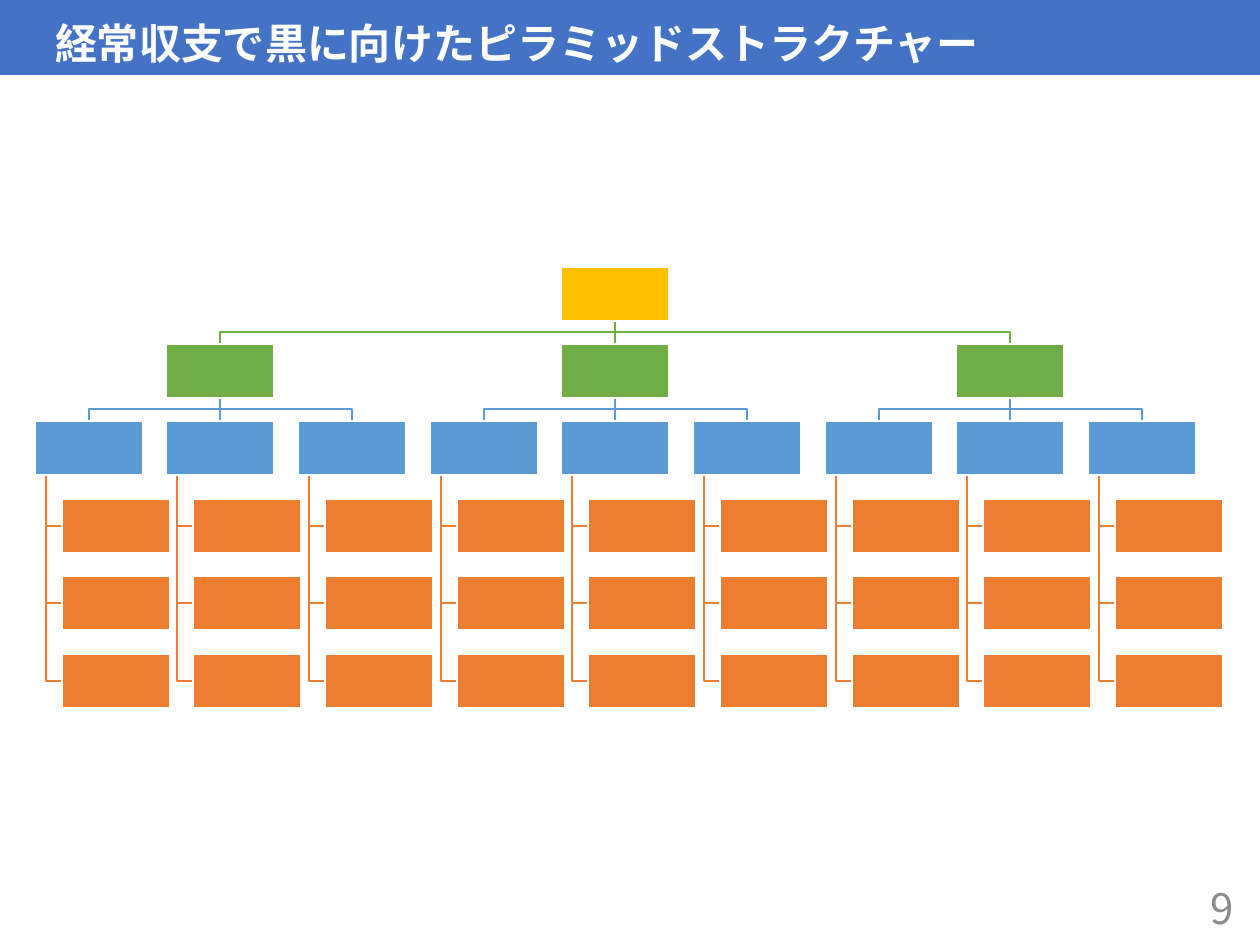
from lxml import etree
from pptx import Presentation
from pptx import util as u
from pptx.dml.color import RGBColor
from pptx.enum import shapes, text
from pptx.oxml.ns import qn

SCALE = 914400 / 126
FONT = "Noto Sans CJK JP"
HEX = {
    "band": "4472C4", "white": "FFFFFF", "page": "8C8C8C",
    "top": "FFC000", "branch": "70AD47", "sub": "5B9BD5", "leaf": "ED7D31",
}
BOX_W, BOX_H = 108, 54
INDENT, STEM = 27, 11
COLS, FAN, LEAVES = 9, 3, 3


def px(n):
    return u.Emu(round(n * SCALE))


def color(name):
    return RGBColor.from_string(HEX[name])


def col_x(col):
    """Left edge of a column; three columns span 395 px."""
    return 35 + 395 * col // 3


def row_y(row):
    """Top edge of a row; five rows span 387 px."""
    return 267 + 387 * row // 5


def put_text(shape, words, *, ink, bold=False, align=text.PP_ALIGN.LEFT,
             anchor=text.MSO_ANCHOR.MIDDLE, left=13, space=1.0):
    frame = shape.text_frame
    frame.word_wrap = True
    frame.auto_size = text.MSO_AUTO_SIZE.NONE
    frame.vertical_anchor = anchor
    frame.margin_left, frame.margin_right = px(left), px(13)
    frame.margin_top = frame.margin_bottom = px(6)
    para = frame.paragraphs[0]
    para.alignment, para.line_spacing = align, space
    run = para.add_run()
    run.text = words
    font = run.font
    font.name, font.size, font.bold = FONT, u.Pt(24), bold
    font.color.rgb = color(ink)
    east = etree.SubElement(font._element, qn("a:ea"))
    east.set("typeface", FONT)


def add_title(slide, words):
    title = slide.shapes.title
    title.left, title.top, title.width, title.height = map(px, (0, 0, 1260, 75))
    title.fill.solid()
    title.fill.fore_color.rgb = color("band")
    put_text(title, words, ink="white", bold=True, left=55, space=0.9,
             anchor=text.MSO_ANCHOR.BOTTOM)


def add_page(slide, number):
    box = slide.shapes.add_textbox(*map(px, (964, 883, 283, 50)))
    put_text(box, number, ink="page", align=text.PP_ALIGN.RIGHT)


def add_box(slide, x, y, fill):
    box = slide.shapes.add_shape(
        shapes.MSO_SHAPE.RECTANGLE, *map(px, (x, y, BOX_W, BOX_H)))
    box.shadow.inherit = False
    box.fill.solid()
    box.fill.fore_color.rgb = color(fill)
    box.line.color.rgb = color("white")
    box.line.width = u.Pt(1)


def add_path(slide, points, ink):
    """Draw a straight connector for two points, or an open bent line."""
    if len(points) == 2:
        ends = [px(n) for point in points for n in point]
        line = slide.shapes.add_connector(shapes.MSO_CONNECTOR.STRAIGHT, *ends)
        etree.SubElement(line._element.spPr, qn("a:effectLst"))
    else:
        build = slide.shapes.build_freeform(*points[0], scale=SCALE)
        build.add_line_segments(points[1:], close=False)
        line = build.convert_to_shape()
        line.shadow.inherit = False
        line.fill.background()
    line.line.color.rgb = color(ink)
    line.line.width = u.Pt(1)


def add_fan(slide, col, row, kids, ink):
    """Link a box to its child columns in the next row."""
    x, y = col_x(col) + BOX_W // 2, row_y(row) + BOX_H
    end = row_y(row + 1)
    mid = (y + end) // 2
    for kid in kids:
        to = col_x(kid) + BOX_W // 2
        bend = [] if kid == col else [(x, mid), (to, mid)]
        add_path(slide, [(x, y), *bend, (to, end)], ink)


def add_stems(slide, col):
    x, y = col_x(col) + STEM, row_y(2) + BOX_H
    for leaf in range(LEAVES):
        mid = row_y(3 + leaf) + BOX_H // 2
        add_path(slide, [(x, y), (x, mid), (col_x(col) + INDENT, mid)], "leaf")


def add_tree(slide):
    root = COLS // 2
    heads = range(FAN // 2, COLS, FAN)
    add_fan(slide, root, 0, heads, "branch")
    for head in heads:
        add_fan(slide, head, 1, range(head - 1, head + 2), "sub")
    for col in range(COLS):
        add_stems(slide, col)

    add_box(slide, col_x(root), row_y(0), "top")
    for head in heads:
        add_box(slide, col_x(head), row_y(1), "branch")
    for col in range(COLS):
        add_box(slide, col_x(col), row_y(2), "sub")
        for leaf in range(LEAVES):
            add_box(slide, col_x(col) + INDENT, row_y(3 + leaf), "leaf")


def main():
    deck = Presentation()
    deck.slide_width, deck.slide_height = px(1260), px(945)
    slide = deck.slides.add_slide(deck.slide_layouts[5])
    add_title(slide, "経常収支で黒に向けたピラミッドストラクチャー")
    add_page(slide, "9")
    add_tree(slide)
    deck.save("out.pptx")


if __name__ == "__main__":
    main()
